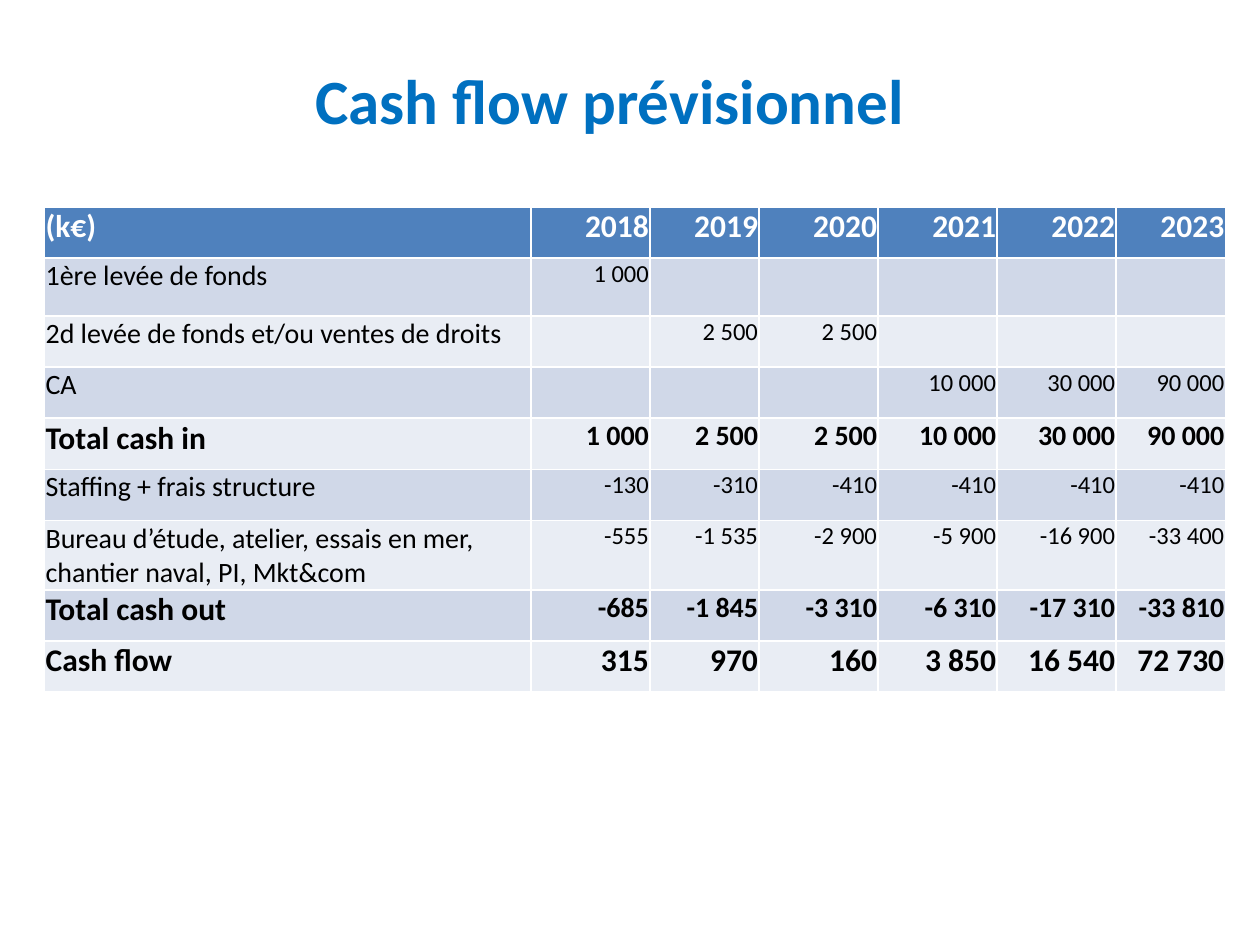
from pptx import Presentation
from pptx.dml.color import RGBColor
from pptx.enum import text as t
from pptx.util import Cm, Pt

# Content: kind of row, label, one value per year
TITLE = "Cash flow prévisionnel"
ROWS = [
    ("head", "(k€)", "2018", "2019", "2020", "2021", "2022", "2023"),
    ("item", "1ère levée de fonds", "1 000", "", "", "", "", ""),
    ("item", "2d levée de fonds et/ou ventes de droits",
     "", "2 500", "2 500", "", "", ""),
    ("item", "CA", "", "", "", "10 000", "30 000", "90 000"),
    ("total", "Total cash in",
     "1 000", "2 500", "2 500", "10 000", "30 000", "90 000"),
    ("item", "Staffing + frais structure",
     "-130", "-310", "-410", "-410", "-410", "-410"),
    ("item", "Bureau d’étude, atelier, essais en mer, chantier naval, PI, Mkt&com",
     "-555", "-1 535", "-2 900", "-5 900", "-16 900", "-33 400"),
    ("total", "Total cash out",
     "-685", "-1 845", "-3 310", "-6 310", "-17 310", "-33 810"),
    ("net", "Cash flow", "315", "970", "160", "3 850", "16 540", "72 730"),
]

# Label size, value size, bold
STYLES = {
    "head": (18, 18, True),
    "item": (16, 14, False),
    "total": (18, 16, True),
    "net": (18, 18, True),
}
COLORS = {"title": "0070C0", "head": "4F81BD", "odd": "D0D8E8",
          "even": "E9EDF4", "white": "FFFFFF", "black": "000000"}
FONT = "Calibri"
WIDTHS = [9.8, 2.4, 2.2, 2.4, 2.4, 2.4, 2.2]
HEIGHTS = [1.03, 1.17] + [1.03] * 7


def color(name):
    return RGBColor.from_string(COLORS[name])


def style(par, size, bold, tint, align):
    par.alignment = align
    for run in par.runs:
        font = run.font
        font.name, font.size, font.bold = FONT, Pt(size), bold
        font.color.rgb = color(tint)


def fill_cell(cell, value, size, bold, tint, back, align):
    cell.fill.solid()
    cell.fill.fore_color.rgb = color(back)
    if not value:
        return
    cell.margin_left = cell.margin_right = cell.margin_top = Cm(0.02)
    cell.margin_bottom = 0
    cell.text_frame.text = value
    style(cell.text_frame.paragraphs[0], size, bold, tint, align)


def add_title(slide):
    title = slide.shapes.title
    title.left, title.top = Cm(5.89), Cm(1.12)
    title.width, title.height = Cm(12.8), Cm(1.8)
    frame = title.text_frame
    frame.text = TITLE
    frame.vertical_anchor = t.MSO_ANCHOR.TOP
    style(frame.paragraphs[0], 36, True, "title", t.PP_ALIGN.CENTER)


def add_flows(slide):
    table = slide.shapes.add_table(
        len(ROWS), len(WIDTHS), Cm(0.9), Cm(4.17),
        Cm(sum(WIDTHS)), Cm(sum(HEIGHTS))).table
    for col, width in zip(table.columns, WIDTHS):
        col.width = Cm(width)
    for r, (kind, *values) in enumerate(ROWS):
        table.rows[r].height = Cm(HEIGHTS[r])
        label, number, bold = STYLES[kind]
        head = kind == "head"
        back = "head" if head else "odd" if r % 2 else "even"
        tint = "white" if head else "black"
        for c, value in enumerate(values):
            fill_cell(table.cell(r, c), value, number if c else label, bold,
                      tint, back, t.PP_ALIGN.RIGHT if c else t.PP_ALIGN.LEFT)


def main():
    deck = Presentation()
    deck.slide_width, deck.slide_height = Cm(25.4), Cm(19.05)
    slide = deck.slides.add_slide(deck.slide_layouts[5])
    add_flows(slide)
    add_title(slide)
    deck.save("out.pptx")


if __name__ == "__main__":
    main()
